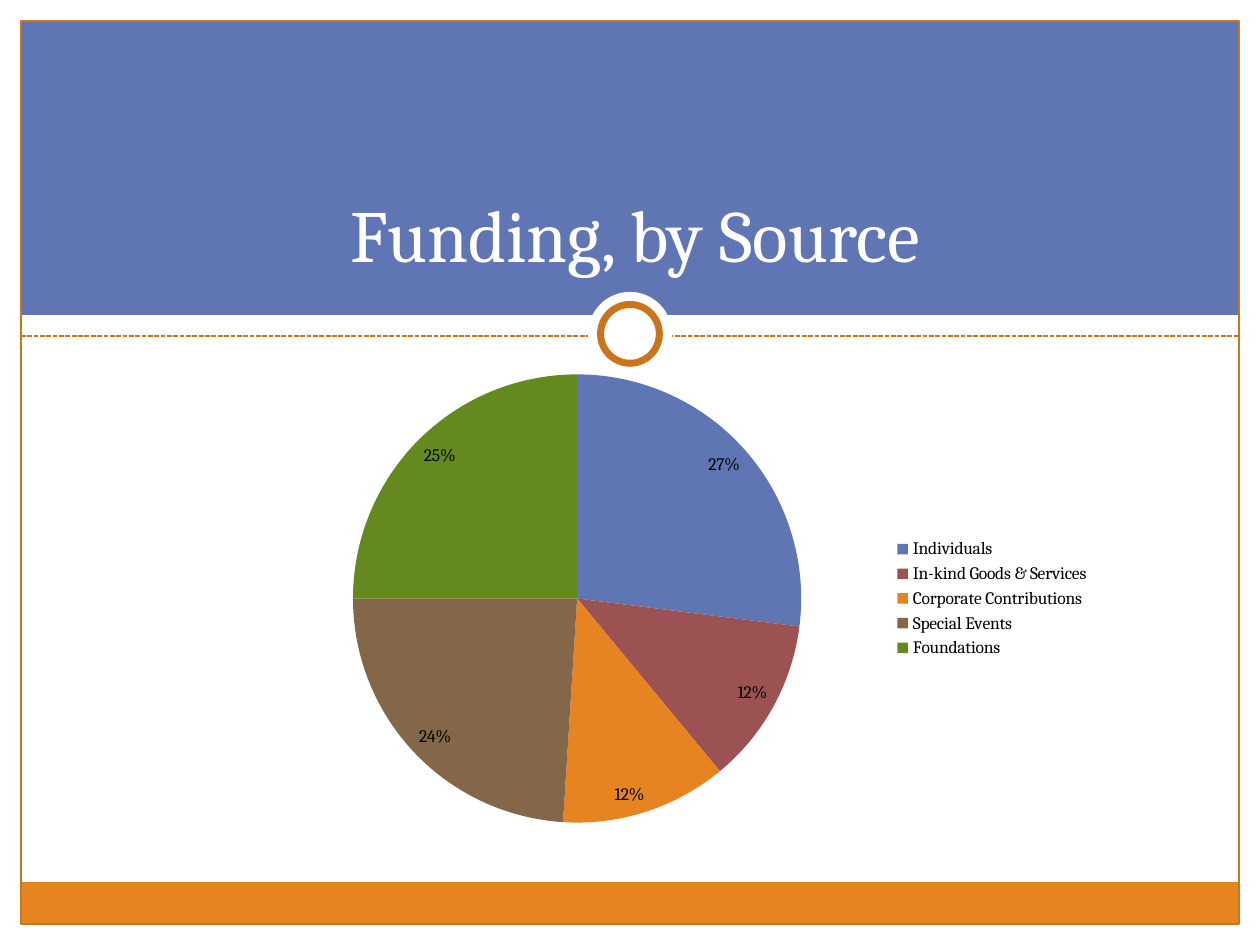
from dataclasses import dataclass

from pptx import Presentation
from pptx.chart.data import CategoryChartData
from pptx.dml.color import RGBColor
from pptx.enum.chart import XL_CHART_TYPE, XL_LABEL_POSITION, XL_LEGEND_POSITION
from pptx.enum.dml import MSO_LINE
from pptx.enum.shapes import MSO_CONNECTOR, MSO_SHAPE
from pptx.enum.text import MSO_ANCHOR, PP_ALIGN
from pptx.oxml.ns import qn
from pptx.util import Inches, Pt


@dataclass(frozen=True)
class Theme:
    font: str = "Cambria"
    white: str = "FFFFFF"
    black: str = "000000"
    blue: str = "6076B4"
    red: str = "9C5252"
    orange: str = "E68422"
    rust: str = "CB741E"
    brown: str = "846648"
    green: str = "63891F"
    head: int = 42
    small: int = 10


def style(font, face, size, color):
    font.name = face
    font.size = Pt(size)
    font.color.rgb = RGBColor.from_string(color)


def write(frame, text, *, face, size, color, align, anchor):
    frame.word_wrap = True
    frame.vertical_anchor = anchor
    part = frame.paragraphs[0]
    part.alignment = align
    run = part.add_run()
    run.text = text
    style(run.font, face, size, color)


class Deck:
    cols, rows = 60, 45

    def __init__(self, theme):
        self.theme = theme
        self.show = Presentation()
        self.show.slide_width = Inches(10)
        self.show.slide_height = Inches(7.5)
        self.slide = self.show.slides.add_slide(self.show.slide_layouts[5])

    def place(self, left, top, width, height):
        col = self.show.slide_width / self.cols
        row = self.show.slide_height / self.rows
        return round(left * col), round(top * row), round(width * col), round(height * row)

    def stroke(self, line, color, width):
        line.color.rgb = RGBColor.from_string(color)
        line.width = Pt(width)

    def shape(self, kind, spot, fill=None, line=None, width=0.75):
        item = self.slide.shapes.add_shape(kind, *self.place(*spot))
        item.shadow.inherit = False
        if fill:
            item.fill.solid()
            item.fill.fore_color.rgb = RGBColor.from_string(fill)
        else:
            item.fill.background()
        if line:
            self.stroke(item.line, line, width)
        else:
            item.line.fill.background()
        return item

    def dash(self, host, color, width):
        rule = self.slide.shapes.add_connector(MSO_CONNECTOR.STRAIGHT, 0, 0, 0, 0)
        rule.begin_connect(host, 1)
        rule.end_connect(host, 3)
        self.stroke(rule.line, color, width)
        rule.line.dash_style = MSO_LINE.SQUARE_DOT
        props = rule._element.spPr
        props.append(props.makeelement(qn("a:effectLst"), {}))

    def title(self, text, spot):
        box = self.slide.shapes.title
        box.left, box.top, box.width, box.height = self.place(*spot)
        self.slide.shapes._spTree.append(box._element)
        write(box.text_frame, text, face=self.theme.font, size=self.theme.head,
              color=self.theme.white, align=PP_ALIGN.CENTER, anchor=MSO_ANCHOR.BOTTOM)

    def pie(self, parts, spot):
        data = CategoryChartData(number_format="0%")
        data.categories = [name for name, share, color in parts]
        data.add_series("Series 1", [share for name, share, color in parts])
        chart = self.slide.shapes.add_chart(
            XL_CHART_TYPE.PIE, *self.place(*spot), data).chart
        style(chart.font, self.theme.font, self.theme.small, self.theme.black)
        chart.has_title = False
        chart.has_legend = True
        chart.legend.position = XL_LEGEND_POSITION.RIGHT
        chart.legend.include_in_layout = False
        plot = chart.plots[0]
        plot.vary_by_categories = True
        plot.has_data_labels = True
        tags = plot.data_labels
        tags.show_value = True
        tags.number_format = "0%"
        tags.number_format_is_linked = False
        tags.position = XL_LABEL_POSITION.INSIDE_END
        for spot_no, (name, share, color) in enumerate(parts):
            fill = plot.series[0].points[spot_no].format.fill
            fill.solid()
            fill.fore_color.rgb = RGBColor.from_string(color)


def main():
    theme = Theme()
    deck = Deck(theme)
    box, disc = MSO_SHAPE.RECTANGLE, MSO_SHAPE.OVAL
    strip = deck.shape(box, (1, 15, 58, 2), theme.white)
    deck.shape(box, (1, 1, 58, 14), theme.blue)
    deck.shape(box, (1, 42, 58, 2), theme.orange)
    deck.shape(box, (1, 1, 58, 43), line=theme.rust)
    deck.dash(strip, theme.rust, 0.9)
    deck.shape(disc, (28, 13.9, 4, 4), theme.white)
    deck.shape(disc, (28.6, 14.5, 2.8, 2.8), theme.white, theme.rust, 4)
    deck.title("Funding, by Source", (4.75, 3.5, 51, 10))
    deck.pie([
        ("Individuals", 0.27, theme.blue),
        ("In-kind Goods & Services", 0.12, theme.red),
        ("Corporate Contributions", 0.12, theme.orange),
        ("Special Events", 0.24, theme.brown),
        ("Foundations", 0.25, theme.green),
    ], (12.5, 17, 40, 23))
    deck.show.save("out.pptx")


if __name__ == "__main__":
    main()
